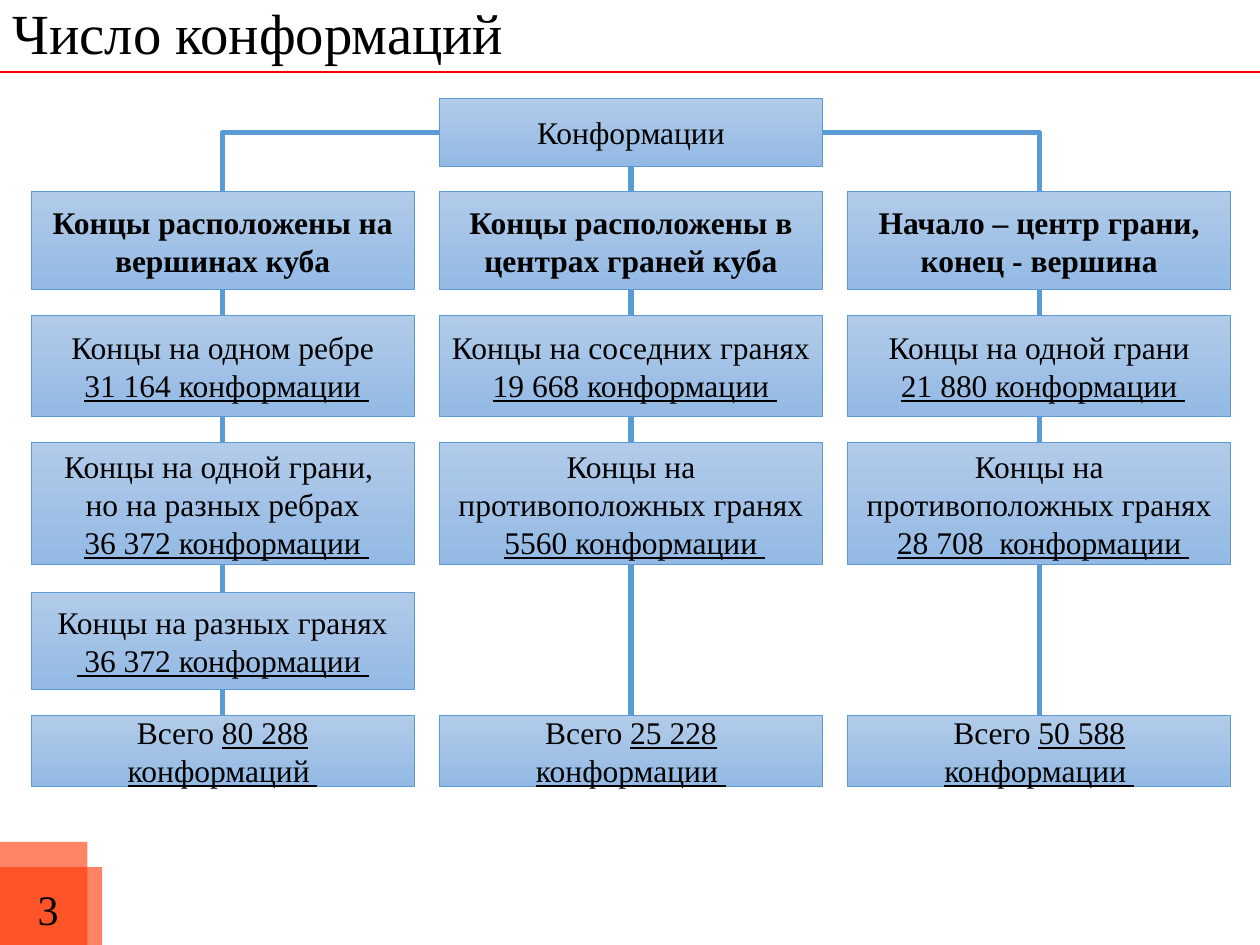
"""Build the slide that counts conformations by the location of their ends."""
from itertools import pairwise

from lxml.etree import SubElement
from pptx import Presentation
from pptx.dml.color import RGBColor
from pptx.enum.shapes import MSO_CONNECTOR, MSO_SHAPE
from pptx.enum.text import MSO_ANCHOR, MSO_AUTO_SIZE, PP_ALIGN
from pptx.oxml.ns import qn
from pptx.util import Cm, Pt

BLACK = RGBColor(0x00, 0x00, 0x00)
RED = RGBColor(0xFF, 0x00, 0x00)
ORANGE = RGBColor(0xFF, 0x33, 0x00)
BLUE = RGBColor(0x5B, 0x9B, 0xD5)
LIGHT_BLUE = RGBColor(0xB1, 0xCB, 0xE9)
MID_BLUE = RGBColor(0x93, 0xB9, 0xE4)
FONT = "Times New Roman"

TITLE = "Число конформаций"
ROOT = "Конформации"
PAGE = "3"
BRANCHES = [
    {
        "heading": "Концы расположены на вершинах куба",
        "cases": [
            [("Концы на одном ребре", ""), (" ", "31 164 конформации ")],
            [("Концы на одной грани, ", ""), ("но на разных ребрах", ""),
             (" ", "36 372 конформации ")],
            [("Концы на разных гранях", ""), ("", " 36 372 конформации ")],
        ],
        "total": ("Всего ", "80 288 конформаций "),
    },
    {
        "heading": "Концы расположены в центрах граней куба",
        "cases": [
            [("Концы на соседних гранях", ""), (" ", "19 668 конформации ")],
            [("Концы на противоположных гранях", ""), (" ", "5560 конформации ")],
        ],
        "total": ("Всего ", "25 228 конформации "),
    },
    {
        "heading": "Начало – центр грани, конец - вершина",
        "cases": [
            [("Концы на одной грани", ""), (" ", "21 880 конформации ")],
            [("Концы на противоположных гранях", ""), (" ", "28 708  конформации ")],
        ],
        "total": ("Всего ", "50 588 конформации "),
    },
]

LEFT, PITCH, WIDTH, INSET = 0.63, 8.23, 7.72, 0.22
ROOT_ROW = (1.98, 1.37)
HEADING_ROW = (3.86, 1.98)
CASE_ROWS = [(6.37, 2.03), (8.93, 2.46), (11.94, 1.96)]
TOTAL_ROW = (14.43, 1.42)
SQUARES = [(-2.51, 16.97), (-2.21, 17.48)]
TOP, LEFT_SIDE, BOTTOM, RIGHT_SIDE = range(4)


def write(frame, paragraphs, size=18, bold=False, align=PP_ALIGN.CENTER,
          anchor=MSO_ANCHOR.MIDDLE, spacing=None):
    """Fill a text frame with (plain, underlined) paragraphs."""
    frame.word_wrap = True
    frame.auto_size = MSO_AUTO_SIZE.NONE
    frame.vertical_anchor = anchor
    for index, parts in enumerate(paragraphs):
        paragraph = frame.add_paragraph() if index else frame.paragraphs[0]
        paragraph.alignment = align
        paragraph.line_spacing = spacing
        for text, underline in zip(parts, (False, True)):
            if text:
                run = paragraph.add_run()
                run.text = text
                run.font.name, run.font.size = FONT, Pt(size)
                run.font.bold, run.font.underline = bold, underline
                run.font.color.rgb = BLACK


def add_box(slide, column, row, paragraphs, bold=False):
    """Add a gradient box in a column and row of the chart."""
    top, height = row
    box = slide.shapes.add_shape(MSO_SHAPE.RECTANGLE, Cm(LEFT + column * PITCH),
                                 Cm(top), Cm(WIDTH), Cm(height))
    box.shadow.inherit = False
    box.fill.gradient()
    box.fill.gradient_angle = 270
    for stop, color in zip(box.fill.gradient_stops, (LIGHT_BLUE, MID_BLUE)):
        stop.color.rgb = color
    box.line.color.rgb = BLUE
    box.line.width = Pt(0.5)
    box.text_frame.margin_left = box.text_frame.margin_right = Cm(INSET)
    write(box.text_frame, paragraphs, bold=bold)
    return box


def add_line(slide, color, width, kind=MSO_CONNECTOR.STRAIGHT, end_x=0, y=0):
    """Add a connector without a shadow."""
    line = slide.shapes.add_connector(kind, 0, Cm(y), Cm(end_x), Cm(y))
    line.line.color.rgb = color
    line.line.width = Pt(width)
    SubElement(line._element.spPr, qn("a:effectLst"))
    return line


def join(slide, upper, lower, side=BOTTOM):
    """Join a side of the upper box to the top of the lower box."""
    straight = side == BOTTOM
    kind = MSO_CONNECTOR.STRAIGHT if straight else MSO_CONNECTOR.ELBOW
    line = add_line(slide, BLUE, 3, kind)
    line.begin_connect(upper, side)
    line.end_connect(lower, TOP)
    if not straight:
        line._element.spPr.find(qn("a:prstGeom")).set("prst", "bentConnector2")


def add_square(slide, left, top):
    """Add a translucent corner square."""
    square = slide.shapes.add_shape(MSO_SHAPE.RECTANGLE, Cm(left), Cm(top),
                                    Cm(4.27), Cm(3.18))
    square.shadow.inherit = False
    square.fill.solid()
    square.fill.fore_color.rgb = ORANGE
    color = square._element.spPr.find(qn("a:solidFill")).find(qn("a:srgbClr"))
    SubElement(color, qn("a:alpha"), val="60000")
    square.line.fill.background()


def main():
    """Build and save the slide."""
    deck = Presentation()
    deck.slide_width, deck.slide_height = Cm(25.4), Cm(19.05)
    slide = deck.slides.add_slide(deck.slide_layouts[5])

    title = slide.shapes.title
    title.left, title.top, title.width, title.height = 0, 0, Cm(22.94), Cm(1.45)
    write(title.text_frame, [(TITLE, "")], size=32.4, align=PP_ALIGN.LEFT, spacing=0.9)
    add_line(slide, RED, 1.5, end_x=25.4, y=1.45)

    root = add_box(slide, 1, ROOT_ROW, [(ROOT, "")])
    for column, side in enumerate((LEFT_SIDE, BOTTOM, RIGHT_SIDE)):
        branch = BRANCHES[column]
        heading = add_box(slide, column, HEADING_ROW, [(branch["heading"], "")], bold=True)
        cases = [add_box(slide, column, row, case)
                 for row, case in zip(CASE_ROWS, branch["cases"])]
        total = add_box(slide, column, TOTAL_ROW, [branch["total"]])
        join(slide, root, heading, side)
        for upper, lower in pairwise([heading, *cases, total]):
            join(slide, upper, lower)

    for left, top in SQUARES:
        add_square(slide, left, top)
    page = slide.shapes.add_textbox(Cm(0.51), Cm(17.68), Cm(1.75), Cm(1.27))
    write(page.text_frame, [(PAGE, "")], size=24, align=PP_ALIGN.LEFT, anchor=MSO_ANCHOR.TOP)
    deck.save("out.pptx")


if __name__ == "__main__":
    main()
